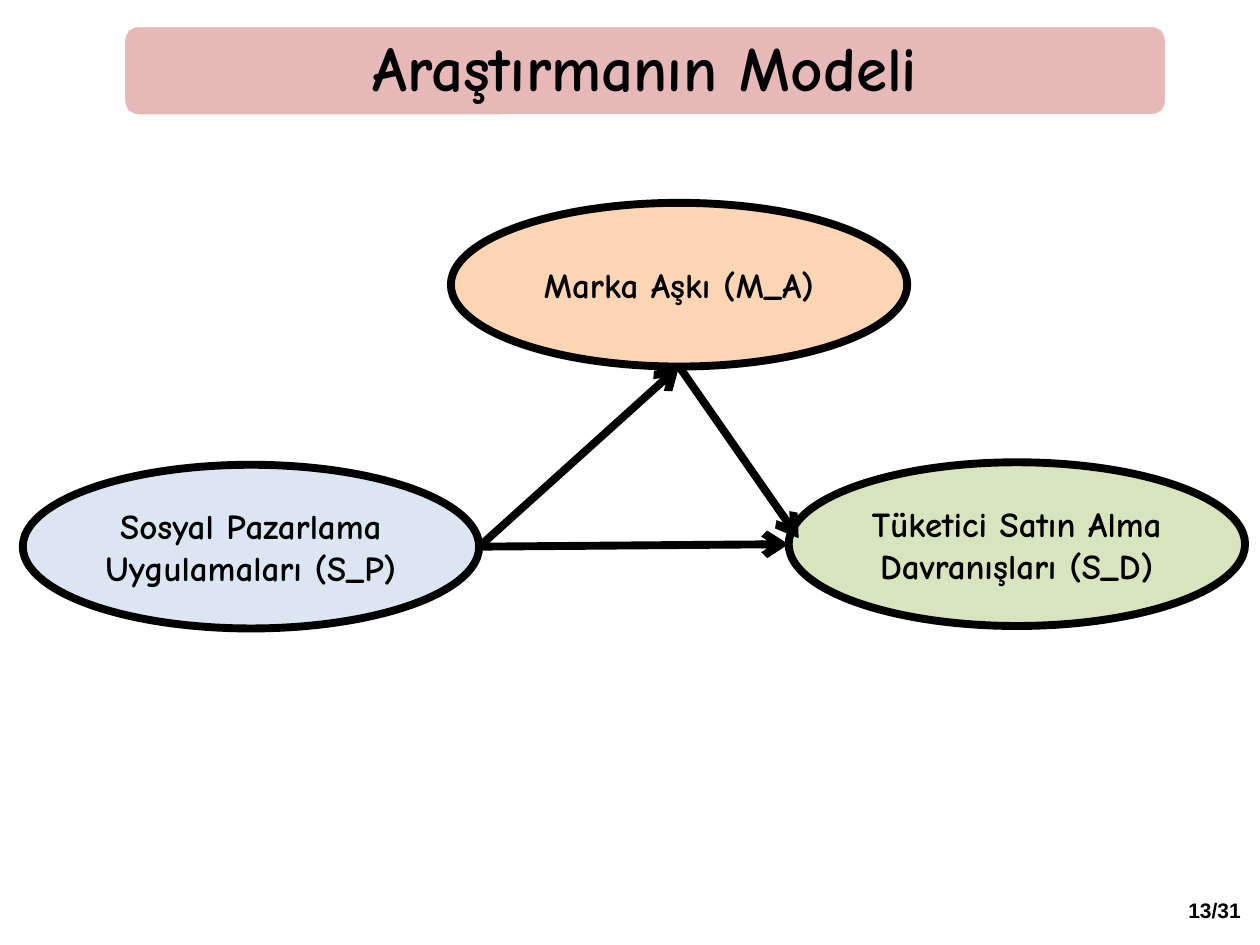
"""Build the research model slide: three constructs joined by arrows."""
import dataclasses

import lxml.etree
import pptx
import pptx.dml.color
import pptx.enum.shapes
import pptx.enum.text
import pptx.oxml.ns
import pptx.util

Cm = pptx.util.Cm
Pt = pptx.util.Pt
SHAPE = pptx.enum.shapes.MSO_SHAPE
OVAL_W, OVAL_H = 9.2, 3.3


@dataclasses.dataclass(frozen=True)
class Theme:
    ink: str = "000000"
    paper: str = "FFFFFF"
    rose: str = "E6B9B8"
    blue: str = "DCE6F2"
    orange: str = "FCD5B5"
    green: str = "D7E4BD"
    font: str = "Comic Neue"
    number_font: str = "Arial"
    title_size: int = 36
    node_size: int = 20
    number_size: int = 12
    line: float = 4.5
    band_line: float = 2


def rgb(value):
    return pptx.dml.color.RGBColor.from_string(value)


def write(tf, text, *, font, size, color, wrap=True, inset=None, spacing=None):
    tf.word_wrap = wrap
    tf.auto_size = pptx.enum.text.MSO_AUTO_SIZE.NONE
    tf.vertical_anchor = pptx.enum.text.MSO_ANCHOR.MIDDLE
    if inset is not None:
        tf.margin_left = tf.margin_right = Cm(inset)
        tf.margin_top = tf.margin_bottom = Cm(inset)
    p = tf.paragraphs[0]
    p.alignment = pptx.enum.text.PP_ALIGN.CENTER
    if spacing:
        p.line_spacing = spacing
    r = p.add_run()
    r.text = text
    r.font.name, r.font.size, r.font.bold = font, Pt(size), True
    r.font.color.rgb = rgb(color)


class Deck:
    def __init__(self, theme):
        self.theme = theme
        self.prs = pptx.Presentation()
        self.prs.slide_width, self.prs.slide_height = Cm(25.4), Cm(19.05)
        self.s = self.prs.slides.add_slide(self.prs.slide_layouts[5])

    def shape(self, kind, x, y, w, h, fill, line, width):
        sp = self.s.shapes.add_shape(kind, Cm(x), Cm(y), Cm(w), Cm(h))
        sp.shadow.inherit = False
        sp.fill.solid()
        sp.fill.fore_color.rgb = rgb(fill)
        sp.line.color.rgb = rgb(line)
        sp.line.width = Pt(width)
        return sp

    def title(self, text, x, y, w, h, edge=0.1):
        t = self.theme
        band = self.shape(SHAPE.ROUNDED_RECTANGLE, x - edge, y - edge,
                          w + 2 * edge, h + 2 * edge, t.rose, t.paper, t.band_line)
        sp = self.s.shapes.title
        sp.left, sp.top, sp.width, sp.height = Cm(x), Cm(y), Cm(w), Cm(h)
        sp.fill.solid()
        sp.fill.fore_color.rgb = rgb(t.rose)
        write(sp.text_frame, text, font=t.font, size=t.title_size,
              color=t.ink, inset=0.38, spacing=0.9)
        sp.element.addprevious(band.element)

    def oval(self, text, x, y, fill):
        t = self.theme
        sp = self.shape(SHAPE.OVAL, x, y, OVAL_W, OVAL_H, fill, t.ink, t.line)
        write(sp.text_frame, text, font=t.font, size=t.node_size, color=t.ink)

    def arrow(self, start, end):
        t = self.theme
        c = self.s.shapes.add_connector(
            pptx.enum.shapes.MSO_CONNECTOR.STRAIGHT,
            *(Cm(v) for v in (*start, *end)))
        c.line.color.rgb = rgb(t.ink)
        c.line.width = Pt(t.line)
        qn = pptx.oxml.ns.qn
        ln = c.line._get_or_add_ln()
        lxml.etree.SubElement(ln, qn("a:tailEnd"), type="arrow")
        lxml.etree.SubElement(c.element.spPr, qn("a:effectLst"))

    def page_number(self, text, x, y, w, h):
        t = self.theme
        sp = self.s.shapes.add_textbox(Cm(x), Cm(y), Cm(w), Cm(h))
        write(sp.text_frame, text, font=t.number_font, size=t.number_size,
              color=t.ink, wrap=False)


def main():
    theme = Theme()
    deck = Deck(theme)
    social, love, purchase = (0.46, 9.37), (9.09, 4.09), (15.9, 9.32)

    deck.page_number("13/31", 23.67, 17.96, 1.63, 0.76)
    deck.title("Araştırmanın Modeli", 2.59, 0.61, 20.83, 1.63)
    deck.oval("Sosyal Pazarlama Uygulamaları (S_P)", *social, theme.blue)
    deck.oval("Marka Aşkı (M_A)", *love, theme.orange)
    deck.oval("Tüketici Satın Alma Davranışları (S_D)", *purchase, theme.green)

    social_right = (social[0] + OVAL_W, social[1] + OVAL_H / 2)
    love_bottom = (love[0] + OVAL_W / 2, love[1] + OVAL_H)
    purchase_left = (purchase[0], purchase[1] + OVAL_H / 2)
    purchase_edge = (purchase_left[0] + 0.2, purchase_left[1] - 0.12)
    deck.arrow(social_right, purchase_left)
    deck.arrow(social_right, love_bottom)
    deck.arrow(love_bottom, purchase_edge)

    deck.prs.save("out.pptx")


if __name__ == "__main__":
    main()
